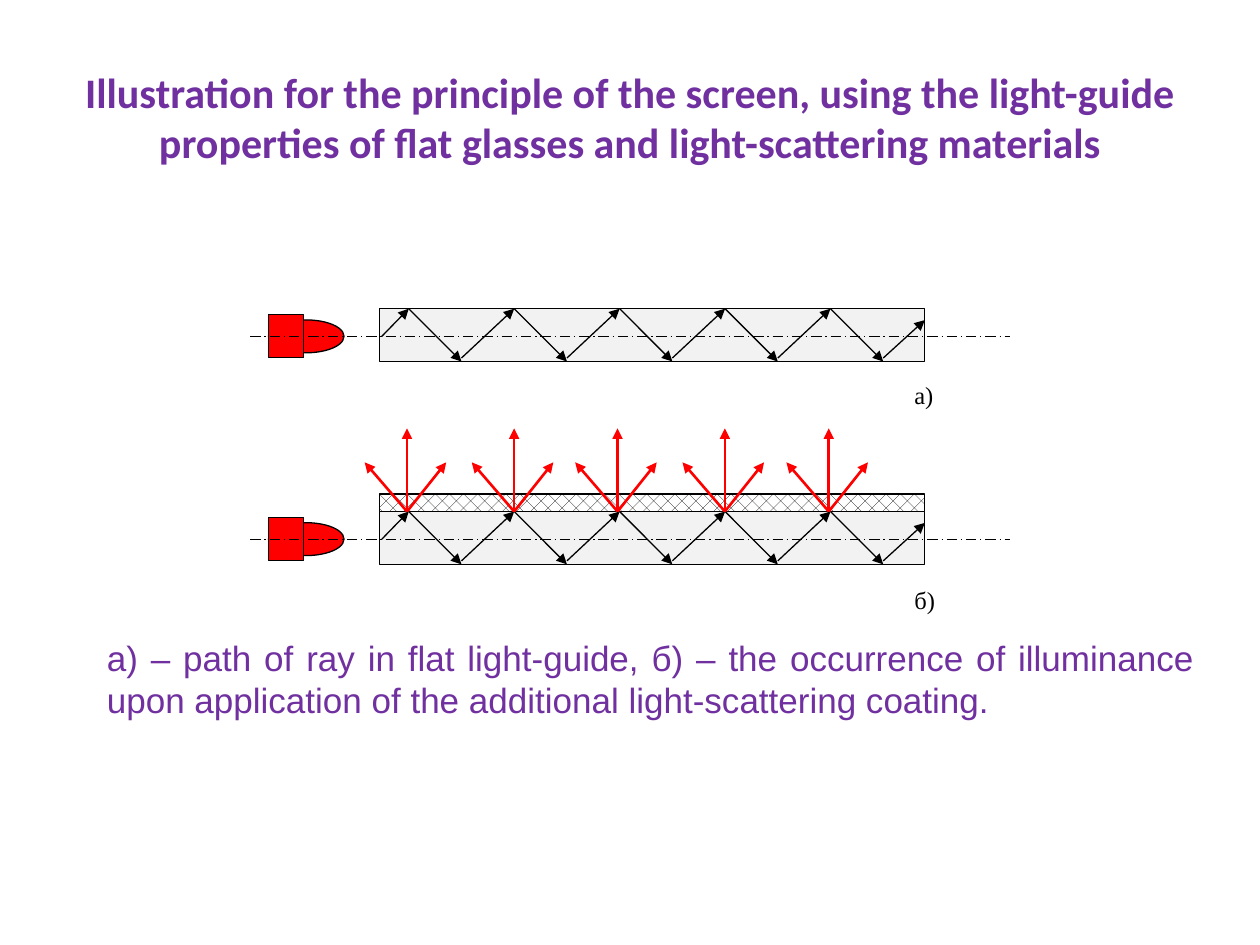
from lxml import etree
from pptx import Presentation
from pptx.dml.color import RGBColor
from pptx.enum.dml import MSO_LINE, MSO_PATTERN
from pptx.enum.shapes import MSO_CONNECTOR, MSO_SHAPE
from pptx.enum.text import MSO_ANCHOR, MSO_AUTO_SIZE, PP_ALIGN
from pptx.oxml.ns import qn
from pptx.util import Pt

# Content
TITLE = ("Illustration for the principle of the screen, using the light-guide "
         "properties of flat glasses and light-scattering materials")
CAPTION = ("а) – path of ray in flat light-guide, б) – the occurrence of illuminance "
           "upon application of the additional light-scattering coating.")
PANELS = [
    {"label": "б)", "top": 292.3, "label_top": 328.3, "coated": True},
    {"label": "а)", "top": 176.4, "label_top": 211, "coated": False},
]

THEME = {
    "purple": "7030A0", "black": "000000", "red": "FF0000",
    "glass": "F2F2F2", "white": "FFFFFF",
    "title_font": "Calibri", "caption_font": "Arial", "label_font": "Times New Roman",
    "title_size": 24, "caption_size": 20, "label_size": 14,
    "thin": 0.75, "thick": 1.5,
}

# Geometry in points; vertical values are measured from the top of each guide
GUIDE_LEFT, GUIDE_WIDTH, GUIDE_HEIGHT = 216.7, 311.8, 30.2
GUIDE_RIGHT = GUIDE_LEFT + GUIDE_WIDTH
AXIS_LEFT, AXIS_RIGHT, AXIS_DROP = 143, 577, 15.8
FIRST_APEX, APEX_COUNT, PERIOD = 233.6, 5, 60.25
RISE_DROP = 28.2
COATING_HEIGHT = 10
SCATTER_POINTS = [232.6, 293.8, 352.9, 414.2, 473.6]
SCATTER_TIPS = [(22.4, -28.1), (0, -47.5), (-24.2, -28.1)]


def color(name):
    return RGBColor.from_string(THEME[name])


def write(frame, text, *, font, size, ink, bold=False, align=PP_ALIGN.JUSTIFY, spacing=None):
    frame.word_wrap = True
    para = frame.paragraphs[0]
    para.alignment = align
    if spacing:
        para.line_spacing = spacing
    span = para.add_run()
    span.text = text
    span.font.name = THEME[font]
    span.font.size = Pt(THEME[size])
    span.font.bold = bold
    span.font.color.rgb = color(ink)


def add_text(slide, left, top, width, height, text, **style):
    box = slide.shapes.add_textbox(Pt(left), Pt(top), Pt(width), Pt(height))
    write(box.text_frame, text, **style)
    return box


def add_block(slide, kind, left, top, width, height, fill=None):
    block = slide.shapes.add_shape(kind, Pt(left), Pt(top), Pt(width), Pt(height))
    block.shadow.inherit = False
    if fill:
        block.fill.solid()
        block.fill.fore_color.rgb = color(fill)
    block.line.color.rgb = color("black")
    block.line.width = Pt(THEME["thin"])
    return block


def add_line(slide, start, end, ink="black", weight="thin", arrow=True):
    line = slide.shapes.add_connector(
        MSO_CONNECTOR.STRAIGHT, *(Pt(value) for value in (*start, *end)))
    line.line.color.rgb = color(ink)
    line.line.width = Pt(THEME[weight])
    if arrow:
        head = etree.SubElement(line.line._get_or_add_ln(), qn("a:tailEnd"))
        head.set("type", "triangle")
    etree.SubElement(line._element.spPr, qn("a:effectLst"))
    return line


def add_guide(slide, top):
    # Lamp and glass
    add_block(slide, MSO_SHAPE.OVAL, 153.4, top + 6.4, 43.2, 18.8, "red")
    add_block(slide, MSO_SHAPE.RECTANGLE, 153.4, top + 3.5, 20.2, 24.5, "red")
    add_block(slide, MSO_SHAPE.RECTANGLE, GUIDE_LEFT, top, GUIDE_WIDTH, GUIDE_HEIGHT, "glass")

    # Optical axis
    axis_y = top + AXIS_DROP
    axis = add_line(slide, (AXIS_LEFT, axis_y), (AXIS_RIGHT, axis_y), arrow=False)
    axis.line.dash_style = MSO_LINE.LONG_DASH_DOT

    # Ray reflected between the two faces
    add_line(slide, (218.2, axis_y), (FIRST_APEX, top))
    for index in range(APEX_COUNT):
        apex = FIRST_APEX + index * PERIOD
        low = apex + PERIOD / 2
        last = index == APEX_COUNT - 1
        target = (GUIDE_RIGHT, top + 6.5) if last else (apex + PERIOD, top)
        add_line(slide, (apex, top), (low, top + GUIDE_HEIGHT))
        add_line(slide, (low, top + RISE_DROP), target)


def add_coating(slide, top):
    coating = add_block(slide, MSO_SHAPE.RECTANGLE, GUIDE_LEFT, top - COATING_HEIGHT,
                        GUIDE_WIDTH, COATING_HEIGHT)
    coating.fill.patterned()
    coating.fill.pattern = MSO_PATTERN.PERCENT_25
    coating.fill.fore_color.rgb = color("black")
    coating.fill.back_color.rgb = color("white")

    # Scattered light
    for x in SCATTER_POINTS:
        for across, up in SCATTER_TIPS:
            add_line(slide, (x, top), (x + across, top + up), "red", "thick")


def main():
    deck = Presentation()
    deck.slide_width, deck.slide_height = Pt(720), Pt(540)
    slide = deck.slides.add_slide(deck.slide_layouts[5])

    # Title
    title = slide.shapes.title
    title.left, title.top, title.width, title.height = Pt(36), Pt(21.6), Pt(648), Pt(90)
    title.text_frame.vertical_anchor = MSO_ANCHOR.MIDDLE
    write(title.text_frame, TITLE, font="title_font", size="title_size", ink="purple",
          bold=True, align=PP_ALIGN.CENTER)

    # Caption
    caption = add_text(slide, 54, 360, 635.8, 55.7, CAPTION, font="caption_font",
                       size="caption_size", ink="purple")
    caption.text_frame.auto_size = MSO_AUTO_SIZE.SHAPE_TO_FIT_TEXT

    # Light guides with their labels
    for panel in PANELS:
        add_guide(slide, panel["top"])
        if panel["coated"]:
            add_coating(slide, panel["top"])
        add_text(slide, 515.4, panel["label_top"], 49.7, 35.3, panel["label"],
                 font="label_font", size="label_size", ink="black", spacing=1.15)

    deck.save("out.pptx")


if __name__ == "__main__":
    main()
